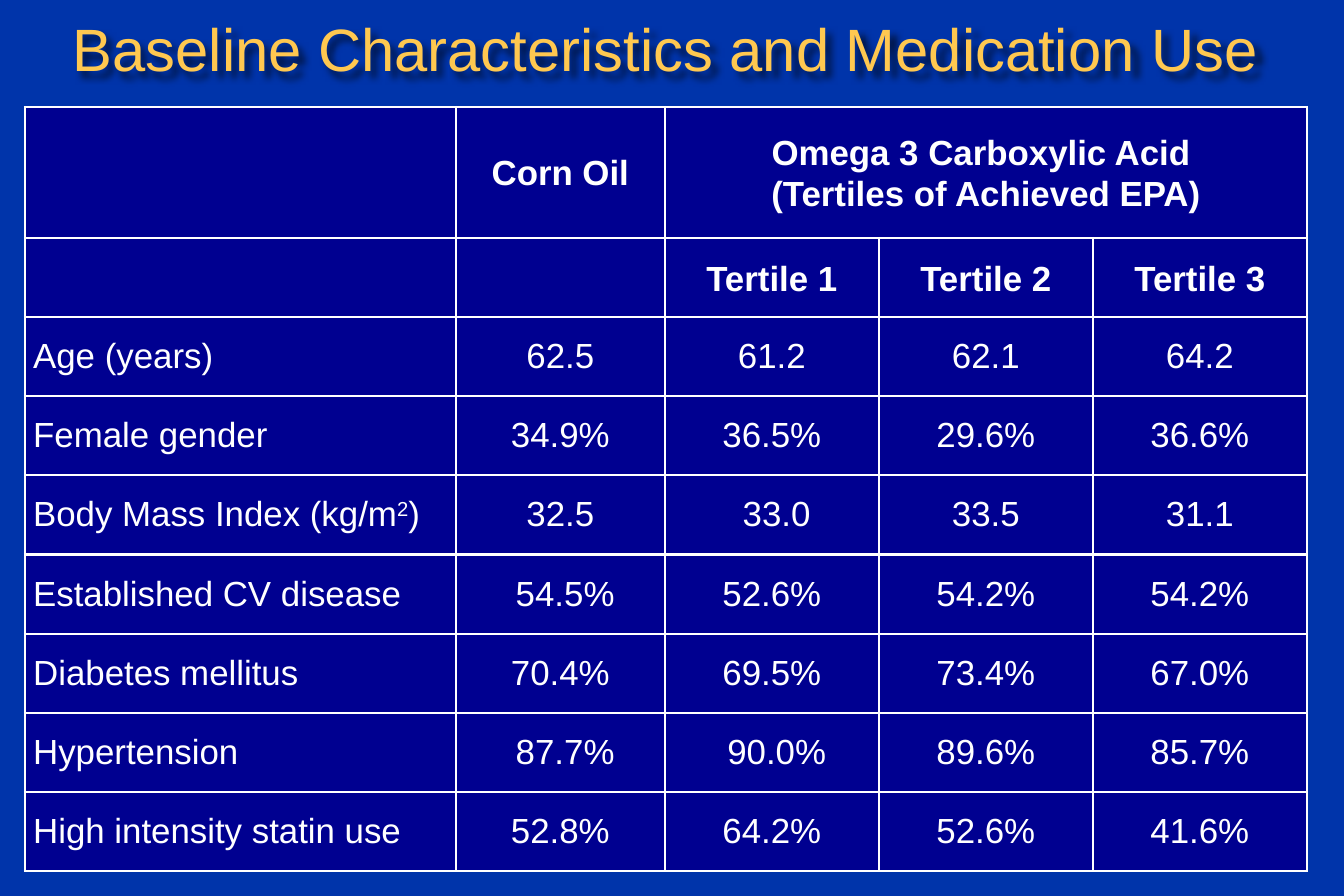
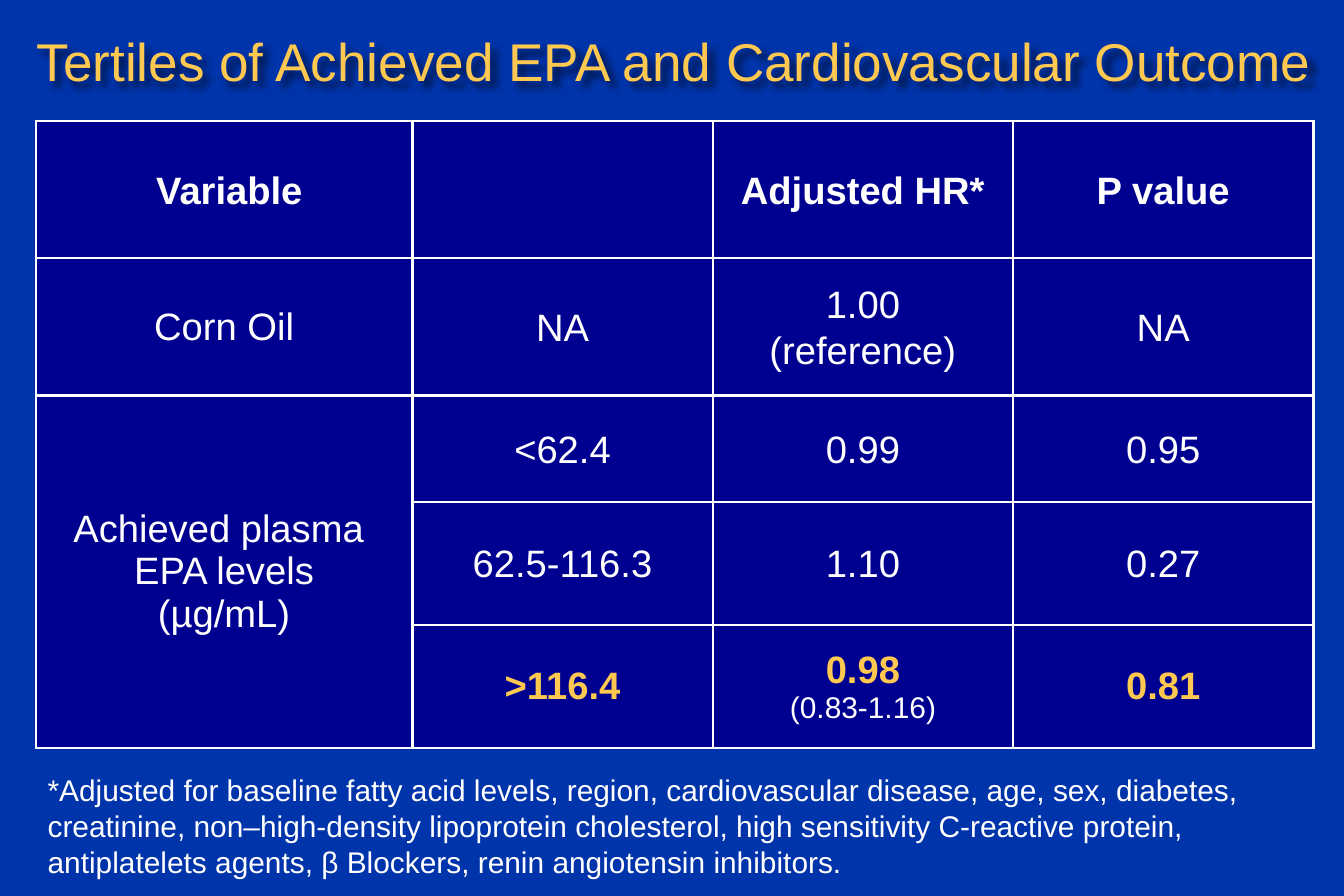
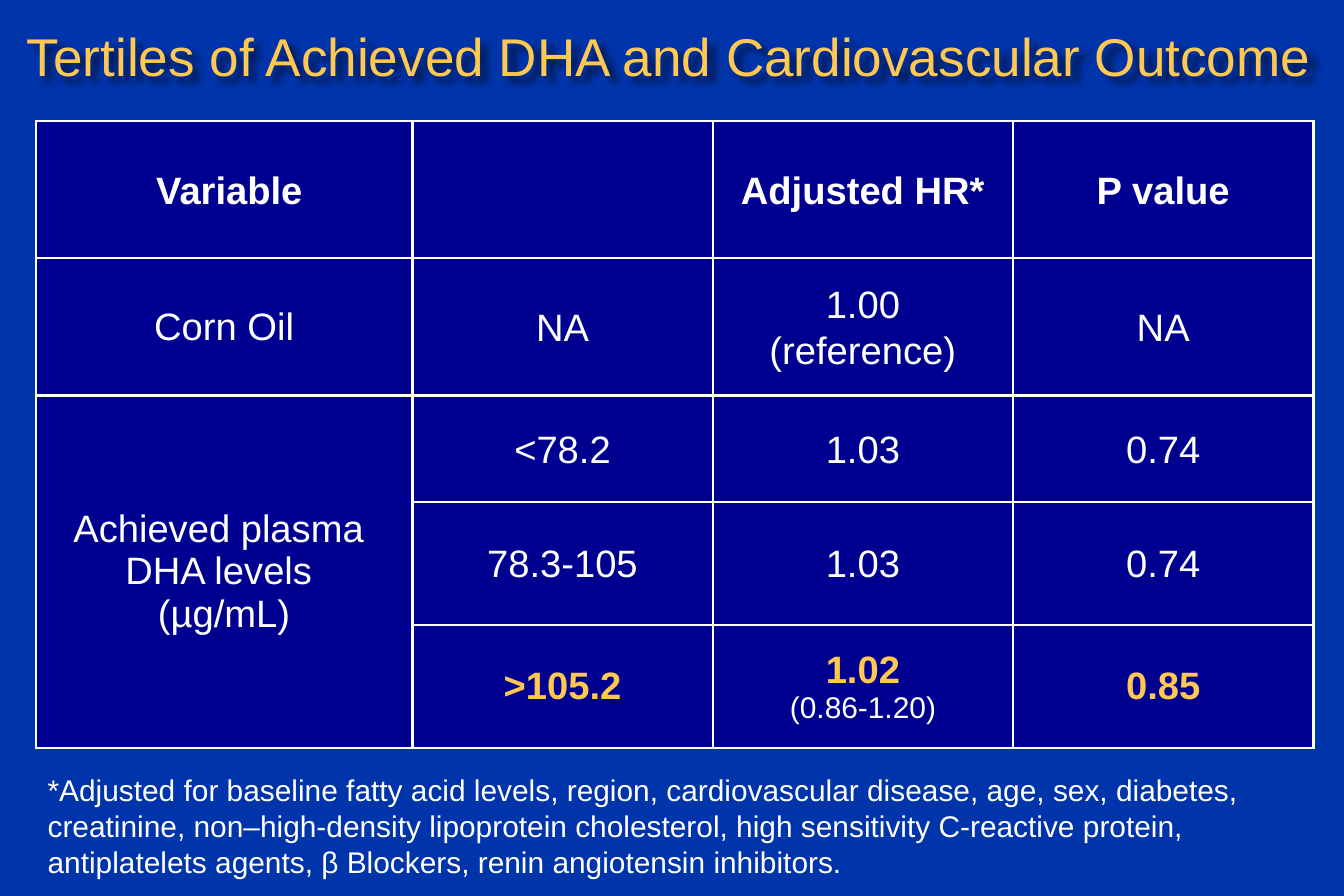
from lxml import etree
from pptx import Presentation
from pptx import util as u
from pptx.dml import color as c
from pptx.enum import text as t
from pptx.oxml import ns

COLORS = {"back": "0034AA", "cell": "000090", "text": "FFFFFF", "accent": "FFC850", "shadow": "000000"}
FONT = "Arial"
CENTER, LEFT = t.PP_ALIGN.CENTER, t.PP_ALIGN.LEFT
MIDDLE, TOP = t.MSO_ANCHOR.MIDDLE, t.MSO_ANCHOR.TOP

BASELINE_ROWS = [
    ["", "Corn Oil", "Omega 3 Carboxylic Acid \n(Tertiles of Achieved EPA)", "", ""],
    ["", "", "Tertile 1", "Tertile 2", "Tertile 3"],
    ["Age (years)", "62.5", "61.2", "62.1", "64.2"],
    ["Female gender", "34.9%", "36.5%", "29.6%", "36.6%"],
    ["Body Mass Index (kg/m^2^)", "32.5", " 33.0", "33.5", "31.1"],
    ["Established CV disease", " 54.5%", "52.6%", "54.2%", "54.2%"],
    ["Diabetes mellitus", "70.4%", "69.5%", "73.4%", "67.0%"],
    ["Hypertension", " 87.7%", " 90.0%", "89.6%", "85.7%"],
    ["High intensity statin use", "52.8%", "64.2%", "52.6%", "41.6%"],
]
OUTCOME_HEAD = [
    [" Variable", "", "Adjusted HR*", "P value"],
    ["Corn Oil", "NA", "1.00\n(reference)", "NA"],
]
EPA_ROWS = [
    ["Achieved plasma \nEPA levels\n(µg/mL)", "<62.4", "0.99", "0.95"],
    ["", "62.5-116.3", "1.10", "0.27"],
    ["", ">116.4", "0.98", "0.81"],
]
DHA_ROWS = [
    ["Achieved plasma \nDHA levels \n(µg/mL)", "<78.2", "1.03", "0.74"],
    ["", "78.3-105", "1.03", "0.74"],
    ["", ">105.2", "1.02", "0.85"],
]
FOOTNOTE = (
    "*Adjusted for baseline fatty acid levels, region, cardiovascular disease, age, sex, diabetes, "
    "creatinine, non–high-density lipoprotein cholesterol, high sensitivity C-reactive protein, "
    "antiplatelets agents, β Blockers, renin angiotensin inhibitors."
)


def rgb(name):
    return c.RGBColor.from_string(COLORS[name])


def add_solid(parent, name):
    solid = etree.SubElement(parent, ns.qn("a:solidFill"))
    etree.SubElement(solid, ns.qn("a:srgbClr"), val=COLORS[name])


def write(frame, content, size=18, color="text", bold=False, align=CENTER, spacing=1.0):
    for line in content.split("\n"):
        para = frame.add_paragraph() if frame.text else frame.paragraphs[0]
        para.alignment = align
        para.line_spacing = spacing
        for index, part in enumerate(line.split("^")):
            span = para.add_run()
            span.text = part
            span.font.name = FONT
            span.font.size = u.Pt(size)
            span.font.bold = bold
            span.font.color.rgb = rgb(color)
            if index % 2:
                span._r.get_or_add_rPr().set("baseline", "30000")


class Deck:
    """Holds the shared style, the presentation and the current slide."""

    def __init__(self):
        self.deck = Presentation()
        self.deck.slide_width, self.deck.slide_height = u.Pt(810), u.Pt(540)
        background = self.deck.slide_master.background.fill
        background.solid()
        background.fore_color.rgb = rgb("back")
        self.page = None

    def new_page(self):
        self.page = self.deck.slides.add_slide(self.deck.slide_layouts[6])

    def text(self, content, left, top, width, height, anchor=TOP, **style):
        box = self.page.shapes.add_textbox(*map(u.Pt, (left, top, width, height)))
        box.text_frame.word_wrap = True
        box.text_frame.vertical_anchor = anchor
        write(box.text_frame, content, **style)
        return box

    def title(self, content, left, top, width, height, size=32):
        box = self.text(content, left, top, width, height, anchor=MIDDLE, size=size, color="accent")
        effects = etree.SubElement(box._element.spPr, ns.qn("a:effectLst"))
        shadow = etree.SubElement(effects, ns.qn("a:outerShdw"), blurRad=str(u.Pt(4)),
                                  dist=str(u.Pt(4)), dir="2700000", algn="tl")
        tint = etree.SubElement(shadow, ns.qn("a:srgbClr"), val=COLORS["shadow"])
        etree.SubElement(tint, ns.qn("a:alpha"), val="60000")

    def table(self, left, top, widths, heights):
        frame = self.page.shapes.add_table(len(heights), len(widths), u.Pt(left), u.Pt(top),
                                           u.Pt(sum(widths)), u.Pt(sum(heights)))
        table = frame.table
        table.first_row = table.horz_banding = False
        for column, width in zip(table.columns, widths):
            column.width = u.Pt(width)
        for row, height in zip(table.rows, heights):
            row.height = u.Pt(height)
        for cell in table.iter_cells():
            self.style_cell(cell)
        return table

    def style_cell(self, cell):
        cell.margin_left = cell.margin_right = u.Pt(5)
        cell.margin_top = cell.margin_bottom = 0
        cell.vertical_anchor = MIDDLE
        props = cell._tc.get_or_add_tcPr()
        for side in ("a:lnL", "a:lnR", "a:lnT", "a:lnB"):
            add_solid(etree.SubElement(props, ns.qn(side), w=str(u.Pt(1.5))), "text")
        cell.fill.solid()
        cell.fill.fore_color.rgb = rgb("cell")

    def save(self):
        self.deck.save("out.pptx")


def baseline_page(deck):
    deck.new_page()
    table = deck.table(15, 64.5, [259.7, 126, 129, 129, 129], [79] + [47.7] * 8)
    table.cell(0, 2).merge(table.cell(0, 4))
    for row, values in enumerate(BASELINE_ROWS):
        head = row < 2
        for column, value in enumerate(values):
            if value:
                write(table.cell(row, column).text_frame, value, size=21, bold=head,
                      align=CENTER if column else LEFT, spacing=1.07 if head else 1.0)
    deck.title("Baseline Characteristics and Medication Use ", 5, 8.6, 802, 40.3, size=36)


def outcome_page(deck, title, place, level_rows, interval):
    deck.new_page()
    table = deck.table(21.6, 72.8, [227, 181, 181, 181], [82.8, 82.8, 64.4, 74, 74])
    table.cell(2, 0).merge(table.cell(4, 0))
    for row, values in enumerate(OUTCOME_HEAD + level_rows):
        last = row == 4
        for column, value in enumerate(values):
            loose = row == 0 or (row < 3 and column > 0)
            if value:
                write(table.cell(row, column).text_frame, value, size=23, bold=row == 0 or last,
                      color="accent" if last else "text", spacing=1.07 if loose else 1.0)
    write(table.cell(4, 2).text_frame, interval)
    deck.title(title, *place)
    deck.text(FOOTNOTE, 21.6, 461.5, 788, 72.7, align=LEFT)


def main():
    deck = Deck()
    baseline_page(deck)
    outcome_page(deck, "Tertiles of Achieved EPA and Cardiovascular Outcome",
                 (1.4, 5, 810, 62.6), EPA_ROWS, "(0.83-1.16)")
    outcome_page(deck, "Tertiles of Achieved DHA and Cardiovascular Outcome",
                 (0, 2.2, 807, 62.6), DHA_ROWS, "(0.86-1.20)")
    deck.save()


if __name__ == "__main__":
    main()
